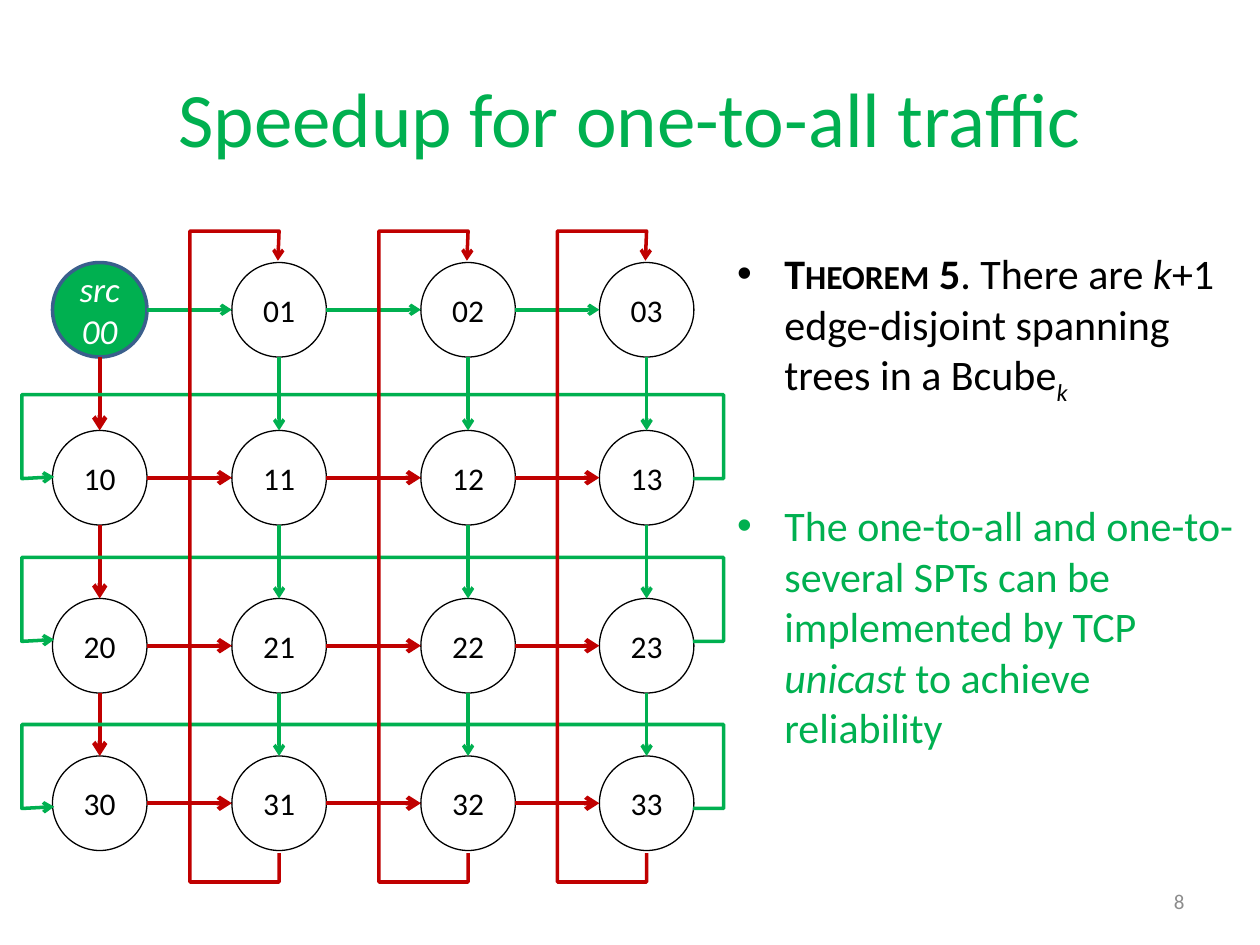
from pptx import Presentation
from pptx.dml.color import RGBColor
from pptx.enum.shapes import MSO_CONNECTOR, MSO_SHAPE
from pptx.enum.text import MSO_ANCHOR, MSO_AUTO_SIZE, PP_ALIGN
from pptx.oxml.ns import qn
from pptx.oxml.xmlchemy import OxmlElement
from pptx.util import Pt

STRAIGHT = MSO_CONNECTOR.STRAIGHT
ELLIPSE = MSO_SHAPE.OVAL
MIDDLE, TOP = MSO_ANCHOR.MIDDLE, MSO_ANCHOR.TOP
LEFT, CENTER, RIGHT = PP_ALIGN.LEFT, PP_ALIGN.CENTER, PP_ALIGN.RIGHT
NO_AUTOFIT = MSO_AUTO_SIZE.NONE

COLORS = {
    "green": "00B050",
    "red": "C00000",
    "outline": "3A5F8C",
    "black": "000000",
    "white": "FFFFFF",
    "gray": "8C8C8C",
}
FONT = "Calibri"

# Grid of servers, in points
NODE = 54
COLUMNS = [30, 132.5, 240.5, 342.5]
ROWS = [150, 246, 342, 432]
GREEN_LOOP_TOPS = [225.5, 318.5, 414]


def color(name):
    return RGBColor.from_string(COLORS[name])


def add_text(paragraph, text, size=24, fill="black", bold=False, italic=False,
             small_caps=False, baseline=0):
    run = paragraph.add_run()
    run.text = text
    font = run.font
    font.name, font.size = FONT, Pt(size)
    font.bold, font.italic = bold, italic
    font.color.rgb = color(fill)
    properties = run.font._element
    if small_caps:
        properties.set("cap", "small")
    if baseline:
        properties.set("baseline", str(baseline * 1000))


def place(shape, left, top, width, height):
    shape.left, shape.top = Pt(left), Pt(top)
    shape.width, shape.height = Pt(width), Pt(height)


def prepare_frame(shape, anchor, alignment):
    frame = shape.text_frame
    frame.word_wrap = True
    frame.auto_size = NO_AUTOFIT
    frame.vertical_anchor = anchor
    paragraph = frame.paragraphs[0]
    paragraph.alignment = alignment
    return paragraph


def style_arrow(shape, line_color, width):
    shape.line.color.rgb = color(line_color)
    shape.line.width = Pt(width)
    head = OxmlElement("a:tailEnd")
    head.set("type", "arrow")
    properties = shape._element.spPr
    properties.find(qn("a:ln")).append(head)
    if properties.find(qn("a:effectLst")) is None:
        properties.append(OxmlElement("a:effectLst"))


def add_arrow(slide, start, end, line_color, width):
    points = [Pt(value) for value in (*start, *end)]
    connector = slide.shapes.add_connector(STRAIGHT, *points)
    style_arrow(connector, line_color, width)


def add_loop(slide, points, line_color):
    corners = [(Pt(x), Pt(y)) for x, y in points]
    builder = slide.shapes.build_freeform(*corners[0], scale=1.0)
    builder.add_line_segments(corners[1:], close=False)
    loop = builder.convert_to_shape()
    loop.fill.background()
    style_arrow(loop, line_color, 2)


def add_node(slide, left, top, label, is_source):
    node = slide.shapes.add_shape(ELLIPSE, Pt(left), Pt(top), Pt(NODE), Pt(NODE))
    node.shadow.inherit = False
    if is_source:
        node.fill.solid()
        node.fill.fore_color.rgb = color("green")
    else:
        node.fill.background()
    node.line.color.rgb = color("outline" if is_source else "black")
    node.line.width = Pt(2 if is_source else 0.75)
    paragraph = prepare_frame(node, MIDDLE, CENTER)
    node.text_frame.margin_left = node.text_frame.margin_right = Pt(4)
    add_text(paragraph, label, size=20 if is_source else 18,
             fill="white" if is_source else "black", italic=is_source)


def add_grid(slide):
    for row, top in enumerate(ROWS):
        for column, left in enumerate(COLUMNS):
            is_source = row == column == 0
            label = "src 00" if is_source else f"{row}{column}"
            add_node(slide, left, top, label, is_source)


def add_links(slide):
    # Arrows along each row: the source row is green, the others red
    for row, top in enumerate(ROWS):
        style = ("red", 2.5) if row else ("green", 2)
        middle = top + NODE / 2
        for left, following in zip(COLUMNS, COLUMNS[1:]):
            add_arrow(slide, (left + NODE, middle), (following, middle), *style)
    # Arrows down each column: the source column is red, the others green
    for column, left in enumerate(COLUMNS):
        style = ("green", 2) if column else ("red", 2.5)
        center = left + NODE / 2
        for top, following in zip(ROWS, ROWS[1:]):
            add_arrow(slide, (center, top + NODE), (center, following), *style)


def add_loops(slide):
    # Green loops lead from the last column back to the first
    first, last, outer_left, outer_right = 31, 396, 12.5, 413.5
    for top in GREEN_LOOP_TOPS:
        bottom = top + 48
        add_loop(slide, [(last, bottom), (outer_right, bottom), (outer_right, top),
                         (outer_left, top), (outer_left, bottom),
                         (first, bottom - 1)], "green")
    # Red loops lead from the last row back to the top row
    above, below = 132, 504
    for left in COLUMNS[1:]:
        center = left + NODE / 2
        side = center - 51
        add_loop(slide, [(center, 487.5), (center, below), (side, below),
                         (side, above), (center, above),
                         (center - 0.7, 149)], "red")


def main():
    presentation = Presentation()
    presentation.slide_width, presentation.slide_height = Pt(720), Pt(540)
    slide = presentation.slides.add_slide(presentation.slide_layouts[3])
    title, theorem, remark = slide.placeholders

    # Title
    place(title, 36, 21.6, 648, 90)
    add_text(prepare_frame(title, MIDDLE, CENTER),
             "Speedup for one-to-all traffic", size=44, fill="green")

    # Theorem
    place(theorem, 414, 138, 306, 102)
    paragraph = prepare_frame(theorem, TOP, LEFT)
    add_text(paragraph, "Theorem", bold=True, small_caps=True)
    add_text(paragraph, " 5", bold=True)
    add_text(paragraph, ". There are ")
    add_text(paragraph, "k", italic=True)
    add_text(paragraph, "+1 edge-disjoint spanning trees in a Bcube")
    add_text(paragraph, "k", italic=True, baseline=-25)

    # Spanning trees
    add_grid(slide)
    add_links(slide)
    add_loops(slide)

    # Remark
    place(remark, 414, 282, 306, 150)
    paragraph = prepare_frame(remark, TOP, LEFT)
    add_text(paragraph, "The one-to-all and one-to-several SPTs can be "
                        "implemented by TCP ", fill="green")
    add_text(paragraph, "unicast", fill="green", italic=True)
    add_text(paragraph, " to achieve reliability", fill="green")

    # Slide number
    number = slide.shapes.add_textbox(Pt(516), Pt(500.5), Pt(168), Pt(28.75))
    add_text(prepare_frame(number, MIDDLE, RIGHT), "8", size=12, fill="gray")

    presentation.save("out.pptx")


if __name__ == "__main__":
    main()
